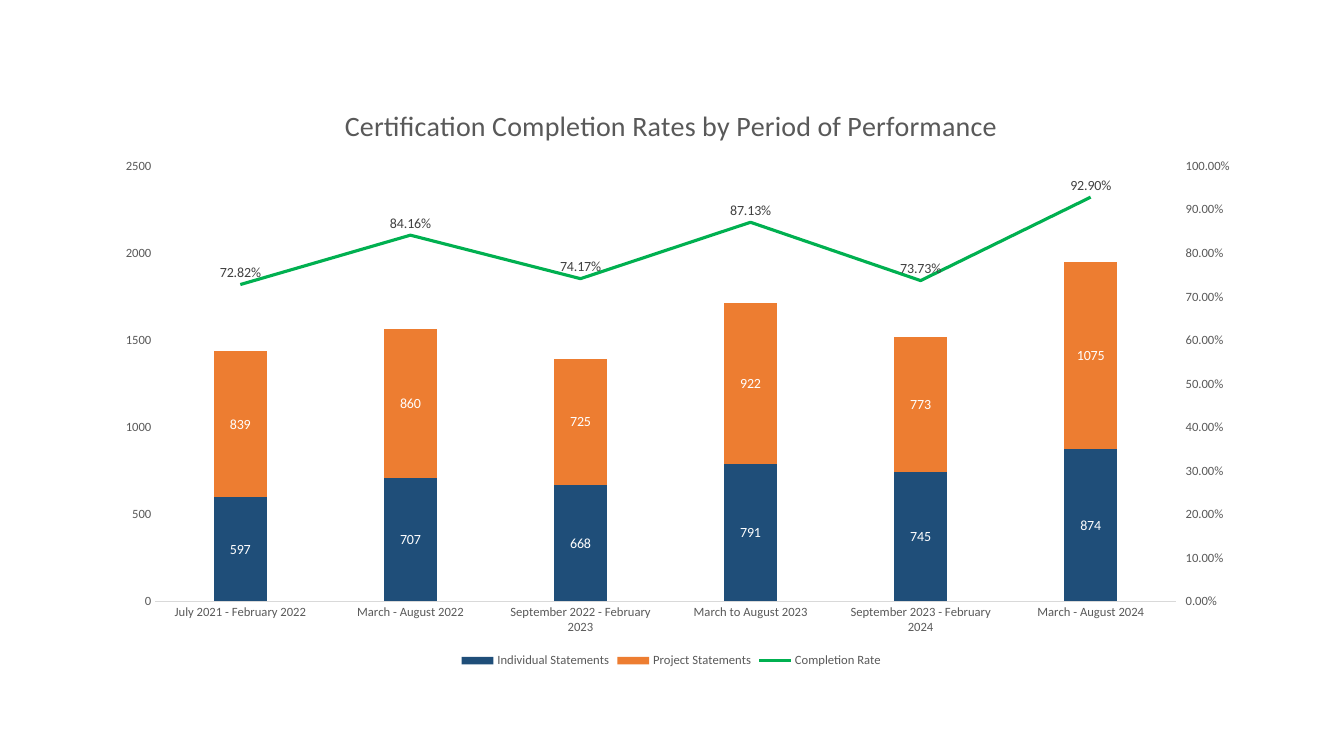
from dataclasses import dataclass

from pptx import Presentation
from pptx.chart.data import CategoryChartData
from pptx.dml.color import RGBColor
from pptx.enum.chart import (XL_CHART_TYPE, XL_LABEL_POSITION, XL_LEGEND_POSITION,
                             XL_MARKER_STYLE, XL_TICK_MARK)
from pptx.oxml import parse_xml
from pptx.oxml.ns import nsdecls, qn
from pptx.util import Pt


@dataclass(frozen=True)
class Theme:
    font: str = "Calibri"
    navy: str = "1F4E79"
    orange: str = "ED7D31"
    green: str = "00B050"
    white: str = "FFFFFF"
    grey: str = "595959"
    dark: str = "404040"
    rule: str = "D9D9D9"
    title: float = 20
    label: float = 10
    axis: float = 9


PERIODS = ["July 2021 - February 2022", "March - August 2022",
           "September 2022 - February 2023", "March to August 2023",
           "September 2023 - February 2024", "March - August 2024"]
INDIVIDUAL = [597, 707, 668, 791, 745, 874]
PROJECT = [839, 860, 725, 922, 773, 1075]
RATE = [0.7282, 0.8416, 0.7417, 0.8713, 0.7373, 0.929]

LAYOUT = """<c:layout %s><c:manualLayout><c:layoutTarget val="inner"/>
<c:xMode val="edge"/><c:yMode val="edge"/><c:x val="0.05"/><c:y val="0.14"/>
<c:w val="0.89"/><c:h val="0.74"/></c:manualLayout></c:layout>"""
LINE_PLOT = """<c:lineChart %s><c:grouping val="standard"/><c:varyColors val="0"/>
<c:marker val="1"/><c:axId val="5001"/><c:axId val="5002"/></c:lineChart>"""
HIDDEN_AXIS = """<c:catAx %s><c:axId val="5001"/>
<c:scaling><c:orientation val="minMax"/></c:scaling><c:delete val="1"/>
<c:axPos val="b"/><c:crossAx val="5002"/><c:crosses val="autoZero"/></c:catAx>"""
RIGHT_AXIS = """<c:valAx %s><c:axId val="5002"/>
<c:scaling><c:orientation val="minMax"/><c:max val="1"/><c:min val="0"/></c:scaling>
<c:delete val="0"/><c:axPos val="r"/><c:numFmt formatCode="0.00%%" sourceLinked="0"/>
<c:majorTickMark val="out"/><c:minorTickMark val="none"/><c:tickLblPos val="nextTo"/>
<c:spPr><a:ln><a:noFill/></a:ln></c:spPr>
<c:txPr><a:bodyPr/><a:p><a:pPr><a:defRPr sz="%d"><a:solidFill><a:srgbClr val="%s"/>
</a:solidFill><a:latin typeface="%s"/></a:defRPr></a:pPr><a:endParaRPr lang="en-US"/></a:p></c:txPr>
<c:crossAx val="5001"/><c:crosses val="max"/><c:majorUnit val="0.1"/></c:valAx>"""


class SlideBuilder:
    def __init__(self, slide, theme):
        self.s, self.th = slide, theme

    def set_font(self, font, size, color):
        fmt = {"name": self.th.font, "size": Pt(size), "bold": False}
        for key, value in fmt.items():
            setattr(font, key, value)
        font.color.rgb = RGBColor.from_string(color)

    def chart(self, x, y, w, h, periods, series):
        data = CategoryChartData()
        data.categories = periods
        for name, values, number_format in series:
            data.add_series(name, values, number_format)
        frame = self.s.shapes.add_chart(XL_CHART_TYPE.COLUMN_STACKED,
                                        Pt(x), Pt(y), Pt(w), Pt(h), data)
        chart = frame.chart
        self.set_font(chart.font, self.th.label, self.th.grey)
        return chart

    def title(self, chart, text):
        p = chart.chart_title.text_frame.paragraphs[0]
        r = p.add_run()
        r.text = text
        self.set_font(r.font, self.th.title, self.th.grey)
        chart.chart_title.include_in_layout = False

    def legend(self, chart):
        chart.has_legend = True
        chart.legend.position = XL_LEGEND_POSITION.BOTTOM
        chart.legend.include_in_layout = False
        self.set_font(chart.legend.font, self.th.axis, self.th.grey)

    def axis(self, axis, line=None):
        fmt = {"has_major_gridlines": False, "major_tick_mark": XL_TICK_MARK.NONE,
               "minor_tick_mark": XL_TICK_MARK.NONE}
        for key, value in fmt.items():
            setattr(axis, key, value)
        self.set_font(axis.tick_labels.font, self.th.axis, self.th.grey)
        if line:
            axis.format.line.color.rgb = RGBColor.from_string(line)
            axis.format.line.width = Pt(0.75)
        else:
            axis.format.line.fill.background()

    def labels(self, series, position, color, number_format="General"):
        labels = series.data_labels
        fmt = {"show_value": True, "position": position,
               "number_format": number_format, "number_format_is_linked": False}
        for key, value in fmt.items():
            setattr(labels, key, value)
        self.set_font(labels.font, self.th.label, color)

    def columns(self, plot, colors):
        for key, value in {"gap_width": 219, "overlap": 100,
                           "vary_by_categories": False}.items():
            setattr(plot, key, value)
        for series, color in zip(plot.series, colors):
            series.format.fill.solid()
            series.format.fill.fore_color.rgb = RGBColor.from_string(color)
            self.labels(series, XL_LABEL_POSITION.CENTER, self.th.white)

    def line_on_right_axis(self, chart, color):
        # Move the last series to a line plot with its own axes
        bars = chart.plots[0]._element
        area = bars.getparent()
        ser = bars.findall(qn("c:ser"))[-1]
        for el in ser.findall(qn("c:invertIfNegative")):
            ser.remove(el)
        line_plot = parse_xml(LINE_PLOT % nsdecls("c"))
        line_plot.insert(2, ser)
        bars.addnext(line_plot)
        right = RIGHT_AXIS % (nsdecls("c", "a"), self.th.axis * 100,
                              self.th.grey, self.th.font)
        last_axis = area.findall(qn("c:valAx"))[-1]
        last_axis.addnext(parse_xml(right))
        last_axis.addnext(parse_xml(HIDDEN_AXIS % nsdecls("c")))

        # Style the line
        series = chart.plots[1].series[0]
        series.smooth = False
        series.marker.style = XL_MARKER_STYLE.NONE
        series.format.line.color.rgb = RGBColor.from_string(color)
        series.format.line.width = Pt(2.25)
        self.labels(series, XL_LABEL_POSITION.ABOVE, self.th.dark, "0.00%")

    def plot_area(self, chart):
        area = chart.plots[0]._element.getparent()
        for el in area.findall(qn("c:layout")):
            area.remove(el)
        area.insert(0, parse_xml(LAYOUT % nsdecls("c")))


def main():
    prs = Presentation()
    prs.slide_width, prs.slide_height = Pt(960), Pt(540)
    th = Theme()
    b = SlideBuilder(prs.slides.add_slide(prs.slide_layouts[6]), th)

    # Chart with title and legend
    chart = b.chart(70, 60, 819, 420, PERIODS, [
        ("Individual Statements", INDIVIDUAL, "General"),
        ("Project Statements", PROJECT, "General"),
        ("Completion Rate", RATE, "0.00%")])
    b.title(chart, "Certification Completion Rates by Period of Performance")
    b.legend(chart)

    # Left and bottom axes
    b.axis(chart.category_axis, th.rule)
    b.axis(chart.value_axis)
    for key, value in {"minimum_scale": 0, "maximum_scale": 2500,
                       "major_unit": 500}.items():
        setattr(chart.value_axis, key, value)

    # Stacked columns and completion line
    b.line_on_right_axis(chart, th.green)
    b.columns(chart.plots[0], [th.navy, th.orange])
    b.plot_area(chart)

    prs.save("out.pptx")


if __name__ == "__main__":
    main()
